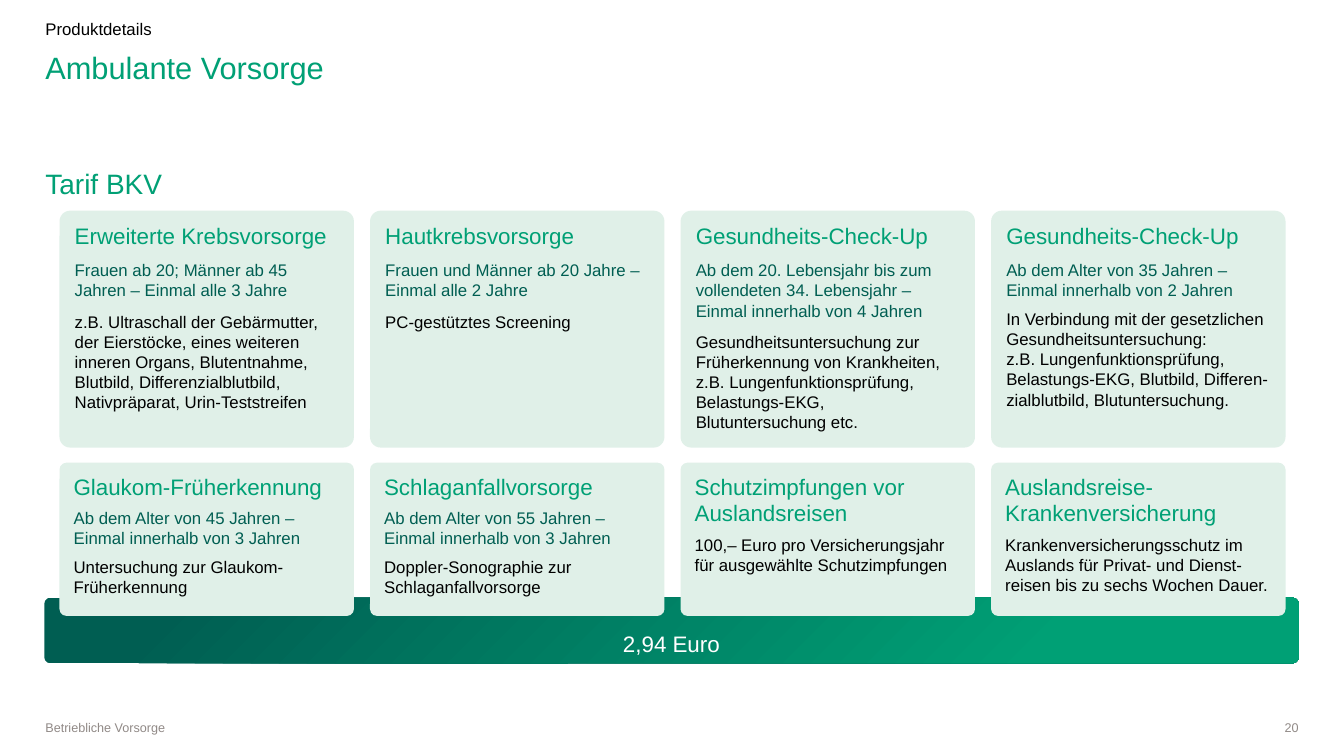
import pptx
import pptx.util
import pptx.dml.color
import pptx.enum.shapes
import pptx.enum.text
import pptx.oxml.ns
import lxml.etree

Inches = pptx.util.Inches
Pt = pptx.util.Pt
RGB = pptx.dml.color.RGBColor.from_string
ALIGN = pptx.enum.text.PP_ALIGN
ANCHOR = pptx.enum.text.MSO_ANCHOR
ROUNDED = pptx.enum.shapes.MSO_SHAPE.ROUNDED_RECTANGLE
qn = pptx.oxml.ns.qn

THEME = {
    "font": "Arial",
    "green": "00A075",
    "dark": "005E52",
    "pale": "E0F0E8",
    "black": "000000",
    "white": "FFFFFF",
    "grey": "918A87",
    "title": 22,
    "subtitle": 20,
    "heading": 16,
    "body": 12,
    "footer": 9,
}


def write(paragraph, text, size, color, align=ALIGN.LEFT, before=0, spacing=1.0):
    paragraph.text = text
    paragraph.alignment = align
    paragraph.space_before = Pt(before)
    paragraph.line_spacing = spacing
    for run in paragraph.runs:
        run.font.name = THEME["font"]
        run.font.size = Pt(THEME[size])
        run.font.color.rgb = RGB(THEME[color])
    for line_break in paragraph._p.findall(qn("a:br")):
        lxml.etree.SubElement(line_break, qn("a:rPr"), sz=str(THEME[size] * 100))


def add_panel(left, top, width, height, corner):
    panel = slide.shapes.add_shape(
        ROUNDED, Inches(left), Inches(top), Inches(width), Inches(height))
    panel.adjustments[0] = corner
    panel.shadow.inherit = False
    panel.line.fill.background()
    return panel


presentation = pptx.Presentation()
presentation.slide_width = Inches(13.33)
presentation.slide_height = Inches(7.5)
slide = presentation.slides.add_slide(presentation.slide_layouts[6])

price_bar = add_panel(0.44, 5.93, 12.44, 0.65, 0.09)
price_bar.fill.gradient()
price_bar.fill.gradient_angle = 315
for stop, (position, color) in zip(
        price_bar.fill.gradient_stops, [(0.1, "dark"), (0.8, "green")]):
    stop.position = position
    stop.color.rgb = RGB(THEME[color])

labels = [
    ("Produktdetails", 0.45, 0.21, 8.35, 0.16, "body", "black", ALIGN.LEFT, ANCHOR.TOP, 0.9),
    ("Ambulante Vorsorge", 0.45, 0.52, 12.44, 0.78, "title", "green", ALIGN.LEFT, ANCHOR.TOP, 0.9),
    ("Tarif BKV", 0.45, 1.62, 12.44, 0.47, "subtitle", "green", ALIGN.LEFT, ANCHOR.TOP, 1.1),
    ("2,94 Euro", 4.61, 6.2, 4.1, 0.37, "heading", "white", ALIGN.CENTER, ANCHOR.MIDDLE, 1.0),
    ("Betriebliche Vorsorge", 0.45, 7.16, 5.12, 0.13, "footer", "grey", ALIGN.LEFT, ANCHOR.BOTTOM, 1.0),
    ("20", 12.37, 7.16, 0.51, 0.13, "footer", "grey", ALIGN.RIGHT, ANCHOR.BOTTOM, 1.0),
]
for text, left, top, width, height, size, color, align, anchor, spacing in labels:
    label = slide.shapes.add_textbox(
        Inches(left), Inches(top), Inches(width), Inches(height)).text_frame
    label.word_wrap = True
    label.vertical_anchor = anchor
    label.margin_left = label.margin_right = label.margin_top = label.margin_bottom = 0
    write(label.paragraphs[0], text, size, color, align, spacing=spacing)

benefit_rows = [
    (2.09, 2.35, [
        ("Erweiterte Krebsvorsorge",
         ("Frauen ab 20; Männer ab 45 Jahren – Einmal alle 3 Jahre", "dark", 8),
         ("z.B. Ultraschall der Gebärmutter, der Eierstöcke, eines weiteren inneren Organs, "
          "Blutentnahme, Blutbild, Differenzialblutbild, Nativpräparat, Urin-Teststreifen",
          "black", 8)),
        ("Hautkrebsvorsorge",
         ("Frauen und Männer ab 20 Jahre – Einmal alle 2 Jahre", "dark", 8),
         ("PC-gestütztes Screening", "black", 8)),
        ("Gesundheits-Check-Up",
         ("Ab dem 20. Lebensjahr bis zum vollendeten 34. Lebensjahr – "
          "Einmal innerhalb von 4 Jahren", "dark", 8),
         ("Gesundheitsuntersuchung zur Früherkennung von Krankheiten, "
          "z.B. Lungenfunktionsprüfung, Belastungs-EKG, Blutuntersuchung etc.", "black", 8)),
        ("Gesundheits-Check-Up",
         ("Ab dem Alter von 35 Jahren – Einmal innerhalb von 2 Jahren", "dark", 8),
         ("In Verbindung mit der gesetzlichen Gesundheitsuntersuchung:\n"
          "z.B. Lungenfunktionsprüfung, Belastungs-EKG, Blutbild, "
          "Differen-zialblutbild, Blutuntersuchung.", "black", 6)),
    ]),
    (4.59, 1.52, [
        ("Glaukom-Früherkennung",
         ("Ab dem Alter von 45 Jahren – Einmal innerhalb von 3 Jahren", "dark", 6),
         ("Untersuchung zur Glaukom-Früherkennung", "black", 6)),
        ("Schlaganfallvorsorge",
         ("Ab dem Alter von 55 Jahren – Einmal innerhalb von 3 Jahren", "dark", 6),
         ("Doppler-Sonographie zur Schlaganfallvorsorge", "black", 6)),
        ("Schutzimpfungen vor Auslandsreisen",
         ("100,– Euro pro Versicherungsjahr\nfür ausgewählte Schutzimpfungen", "black", 6)),
        ("Auslandsreise-Krankenversicherung",
         ("Krankenversicherungsschutz im Auslands für Privat- und "
          "Dienst-reisen bis zu sechs Wochen Dauer.", "black", 6)),
    ]),
]
for top, height, benefits in benefit_rows:
    for column, (heading, *details) in enumerate(benefits):
        card = add_panel(0.59 + 3.08 * column, top, 2.92, height, 0.045)
        card.fill.solid()
        card.fill.fore_color.rgb = RGB(THEME["pale"])
        content = card.text_frame
        content.word_wrap = True
        content.vertical_anchor = ANCHOR.TOP
        content.margin_left = content.margin_right = Inches(0.12)
        content.margin_top = content.margin_bottom = Inches(0.08)
        write(content.paragraphs[0], heading, "heading", "green")
        for detail, color, before in details:
            write(content.add_paragraph(), detail, "body", color, before=before)

presentation.save("out.pptx")
